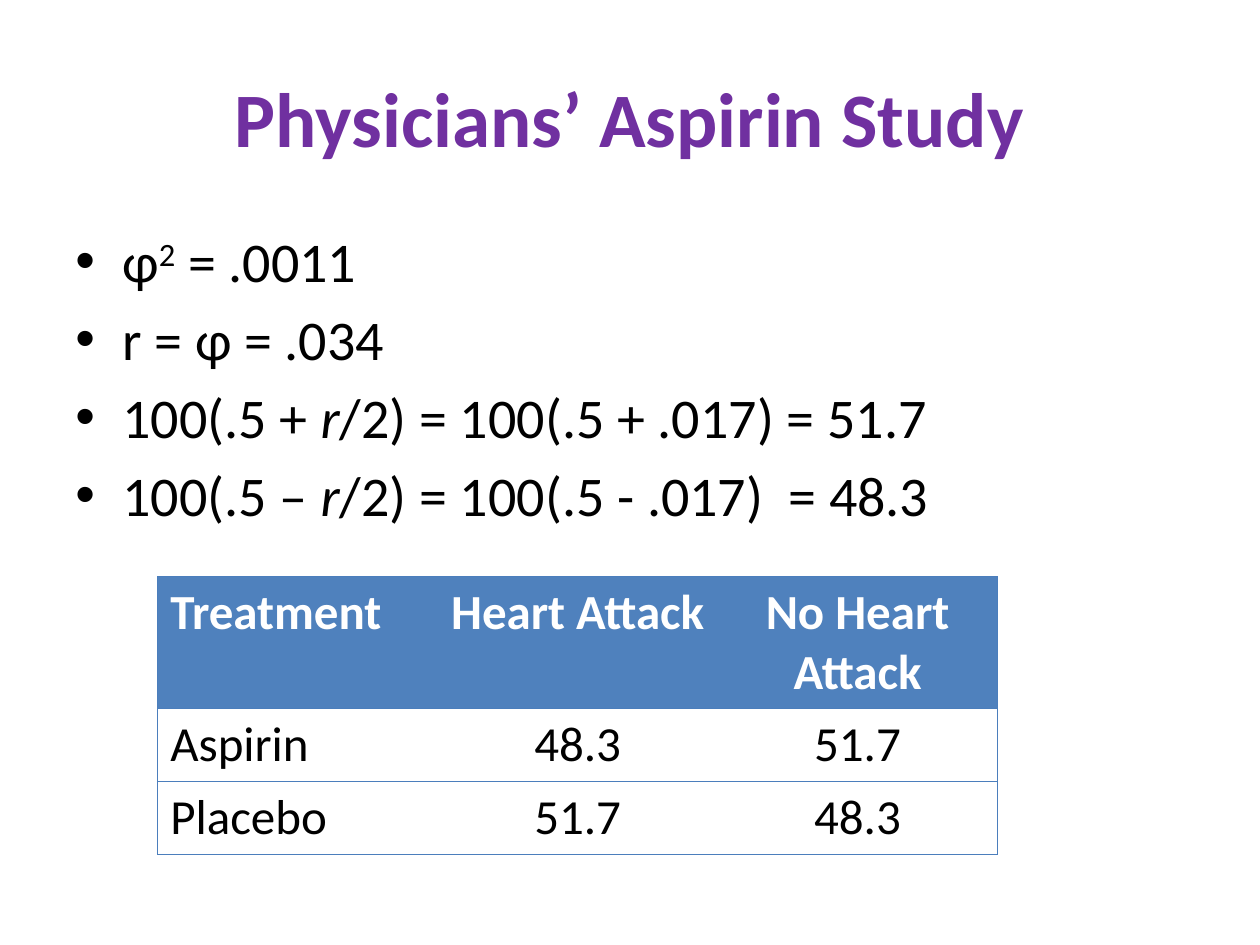
from dataclasses import dataclass

from lxml import etree
from pptx import Presentation
from pptx.dml.color import RGBColor as Rgb
from pptx.enum.text import MSO_ANCHOR as Anchor, PP_ALIGN as Align
from pptx.oxml.ns import qn
from pptx.util import Cm, Pt


@dataclass(frozen=True)
class Theme:
    font: str = "Calibri"
    title: str = "7030A0"
    text: str = "000000"
    header_text: str = "FFFFFF"
    header_fill: str = "4F81BD"
    border: str = "4B7EBC"
    title_size: int = 44
    body_size: int = 32
    table_size: int = 28


theme = Theme()


def add_span(para, text, size, color, bold=False, italic=False):
    span = para.add_run()
    span.text = text
    span.font.name = theme.font
    span.font.size = Pt(size)
    span.font.color.rgb = Rgb.from_string(color)
    span.font.bold = bold
    span.font.italic = italic
    return span


def set_border(cell, side, visible):
    """Draw one side (L, R, T or B) of a cell, or hide it."""
    line = etree.SubElement(cell._tc.get_or_add_tcPr(), qn(f"a:ln{side}"), w=str(Pt(0.75)))
    if visible:
        fill = etree.SubElement(line, qn("a:solidFill"))
        etree.SubElement(fill, qn("a:srgbClr"), val=theme.border)
    else:
        etree.SubElement(line, qn("a:noFill"))


deck = Presentation()
deck.slide_width, deck.slide_height = Cm(25.4), Cm(19.05)
page = deck.slides.add_slide(deck.slide_layouts[6])

# Title
title = page.shapes.add_textbox(Cm(1.27), Cm(0.76), Cm(22.86), Cm(3.18)).text_frame
title.word_wrap = True
title.vertical_anchor = Anchor.MIDDLE
title.paragraphs[0].alignment = Align.CENTER
add_span(title.paragraphs[0], "Physicians’ Aspirin Study", theme.title_size, theme.title, bold=True)

# Effect size formulas, each a list of (text, style)
formulas = [
    [("φ", ""), ("2", "superscript"), (" = .0011", "")],
    [("r = φ = .034", "")],
    [("100(.5 + ", ""), ("r", "italic"), ("/2) = 100(.5 + .017) = 51.7", "")],
    [("100(.5 – ", ""), ("r", "italic"), ("/2) = 100(.5 - .017)  = 48.3", "")],
]
body = page.shapes.add_textbox(Cm(1.27), Cm(4.45), Cm(22.86), Cm(12.57)).text_frame
body.word_wrap = True
for index, formula in enumerate(formulas):
    para = body.add_paragraph() if index else body.paragraphs[0]
    para.space_before = Pt(6)
    props = para._p.get_or_add_pPr()
    props.set("marL", str(Cm(0.95)))
    props.set("indent", str(-Cm(0.95)))
    etree.SubElement(props, qn("a:buFont"), typeface="Arial")
    etree.SubElement(props, qn("a:buChar"), char="•")
    for text, style in formula:
        span = add_span(para, text, theme.body_size, theme.text, italic=style == "italic")
        if style == "superscript":
            span._r.get_or_add_rPr().set("baseline", "30000")

# Success rates by treatment
rates = [
    ("Treatment", "Heart Attack", "No Heart Attack"),
    ("Aspirin", "48.3", "51.7"),
    ("Placebo", "51.7", "48.3"),
]
row_heights = [Cm(2.66), Cm(1.47), Cm(1.47)]
last = len(rates[0]) - 1
table = page.shapes.add_table(
    len(rates), len(rates[0]), Cm(3.18), Cm(11.63), Cm(16.93), sum(row_heights)
).table
table.first_row = True
table.horz_banding = False
for row, (height, values) in enumerate(zip(row_heights, rates)):
    table.rows[row].height = height
    header = row == 0
    for column, value in enumerate(values):
        cell = table.cell(row, column)
        para = cell.text_frame.paragraphs[0]
        para.alignment = Align.CENTER if column else Align.LEFT
        color = theme.header_text if header else theme.text
        add_span(para, value, theme.table_size, color, bold=header)
        for side, visible in (("L", column == 0), ("R", column == last), ("T", True), ("B", True)):
            set_border(cell, side, visible)
        if header:
            cell.fill.solid()
            cell.fill.fore_color.rgb = Rgb.from_string(theme.header_fill)
        else:
            cell.fill.background()

deck.save("out.pptx")
